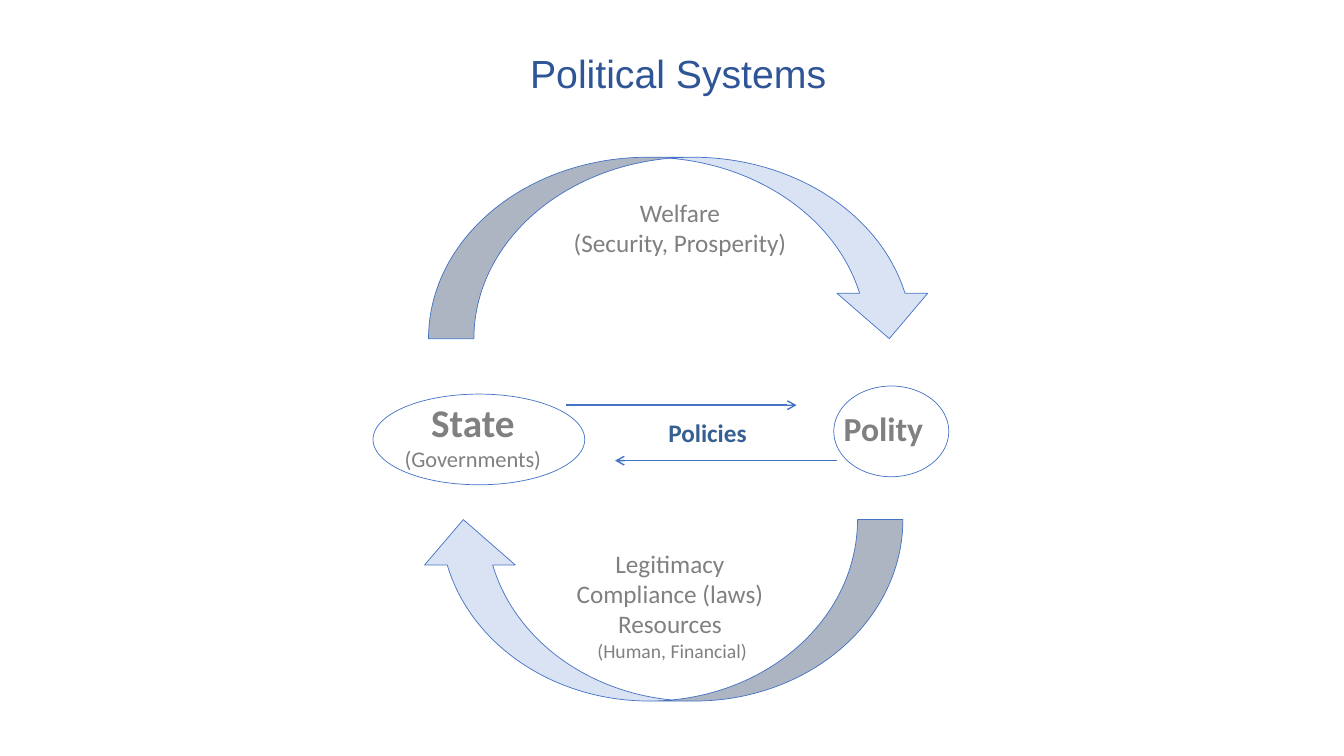
import pptx
import pptx.util
import pptx.dml.color
import pptx.enum.shapes
import pptx.enum.text
import lxml.etree
from dataclasses import dataclass

Inches = pptx.util.Inches
Pt = pptx.util.Pt
Kind = pptx.enum.shapes.MSO_SHAPE
Align = pptx.enum.text.PP_ALIGN
A = "{http://schemas.openxmlformats.org/drawingml/2006/main}"


@dataclass(frozen=True)
class Theme:
    title: str = "2F5597"
    accent: str = "376092"
    body: str = "808080"
    edge: str = "4472C4"
    band: str = "DAE3F3"
    huge: int = 28
    large: int = 24
    normal: int = 18
    small: int = 16
    tiny: int = 14
    thin: float = 0.5
    line: float = 1


THEME = Theme()


def tint(code):
    return pptx.dml.color.RGBColor.from_string(code)


def label(slide, place, rows, color=THEME.body, align=Align.CENTER, font="Calibri"):
    box = slide.shapes.add_textbox(*map(Inches, place))
    frame = box.text_frame
    frame.text = "\n".join(row[0] for row in rows)
    frame.word_wrap = False
    frame.auto_size = pptx.enum.text.MSO_AUTO_SIZE.SHAPE_TO_FIT_TEXT
    for para, (words, size, bold) in zip(frame.paragraphs, rows):
        para.alignment = align
        for run in para.runs:
            run.font.name = font
            run.font.size = Pt(size)
            run.font.bold = bold
            run.font.color.rgb = tint(color)


def outline(slide, kind, place, fill=None, turn=0):
    shape = slide.shapes.add_shape(kind, *map(Inches, place))
    shape.shadow.inherit = False
    shape.rotation = turn
    if fill:
        shape.fill.solid()
        shape.fill.fore_color.rgb = tint(fill)
    else:
        shape.fill.background()
    shape.line.color.rgb = tint(THEME.edge)
    shape.line.width = Pt(THEME.thin)


def arrow(slide, start, end, y):
    link = slide.shapes.add_connector(
        pptx.enum.shapes.MSO_CONNECTOR.STRAIGHT,
        Inches(start), Inches(y), Inches(end), Inches(y))
    link.line.color.rgb = tint(THEME.edge)
    link.line.width = Pt(THEME.line)
    lxml.etree.SubElement(link.line._get_or_add_ln(), A + "tailEnd", type="arrow")
    lxml.etree.SubElement(link._element.spPr, A + "effectLst")


def main():
    deck = pptx.Presentation()
    deck.slide_width = Inches(13.33)
    deck.slide_height = Inches(7.5)
    slide = deck.slides.add_slide(deck.slide_layouts[6])

    label(slide, (5.16, 0.44, 3.17, 0.57),
          [("Political Systems", THEME.huge, False)],
          THEME.title, Align.LEFT, "Arial")
    label(slide, (3.9, 3.9, 1.58, 0.84),
          [("State", THEME.huge, True), ("(Governments)", THEME.small, False)])
    label(slide, (8.27, 4, 1, 0.5),
          [("Polity", THEME.large, True)], align=Align.LEFT)
    label(slide, (5.58, 1.91, 2.33, 0.71),
          [("Welfare", THEME.normal, False),
           ("(Security, Prosperity)", THEME.normal, False)])
    label(slide, (5.61, 5.39, 2.07, 1.25),
          [("Legitimacy", THEME.normal, False),
           ("Compliance (laws)", THEME.normal, False),
           ("Resources", THEME.normal, False),
           (" (Human, Financial)", THEME.tiny, False)])

    outline(slide, Kind.OVAL, (3.7, 3.91, 2.1, 0.9))
    outline(slide, Kind.OVAL, (8.27, 3.83, 1.14, 0.9))
    label(slide, (6.53, 4.09, 0.99, 0.4),
          [("Policies", THEME.normal, True)], THEME.accent, Align.LEFT)

    outline(slide, Kind.CURVED_LEFT_ARROW, (5.86, -0.05, 1.8, 5.02), THEME.band, 270)
    outline(slide, Kind.CURVED_LEFT_ARROW, (5.65, 3.65, 1.8, 4.81), THEME.band, 90)
    arrow(slide, 8.3, 6.1, 4.57)
    arrow(slide, 5.61, 7.9, 4.02)

    deck.save("out.pptx")


if __name__ == "__main__":
    main()
